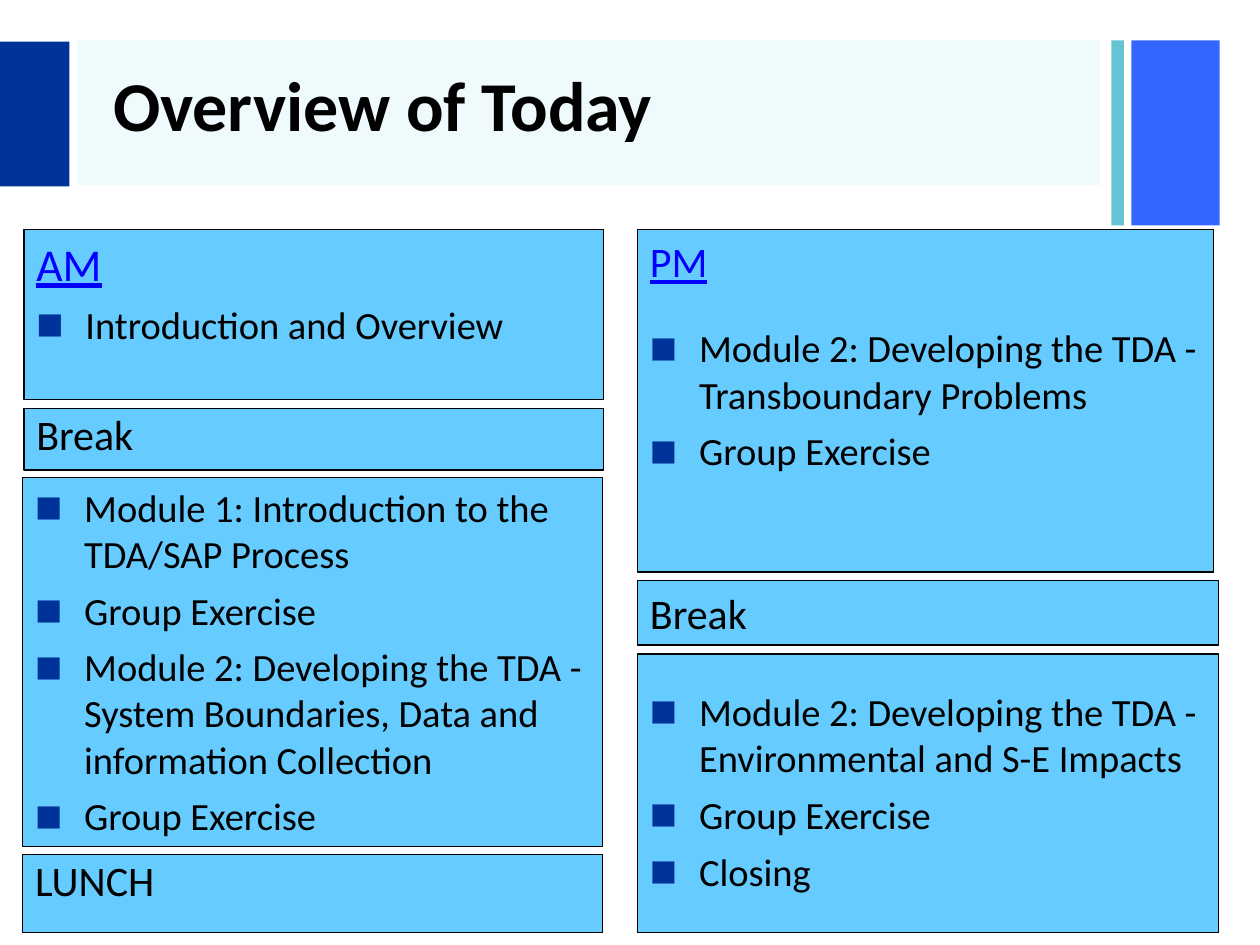
import pptx
import pptx.dml.color
import pptx.enum.shapes
import pptx.enum.text
import pptx.oxml.ns
import pptx.util
from lxml import etree
from pptx.util import Inches, Pt

RGBColor = pptx.dml.color.RGBColor
NAVY = RGBColor(0x00, 0x33, 0x99)
ROYAL = RGBColor(0x33, 0x66, 0xFF)
TEAL = RGBColor(0x65, 0xC4, 0xD2)
AQUA = RGBColor(0x14, 0xC5, 0xD0)
SKY = RGBColor(0x66, 0xCC, 0xFF)
LINK_BLUE = RGBColor(0x00, 0x00, 0xFF)
BLACK = RGBColor(0x00, 0x00, 0x00)
FONT = "Calibri"
HANGING = Inches(0.39)


def add_block(page, left, top, width, height, color):
    block = page.shapes.add_shape(
        pptx.enum.shapes.MSO_SHAPE.RECTANGLE,
        Inches(left), Inches(top), Inches(width), Inches(height))
    block.shadow.inherit = False
    block.fill.solid()
    block.fill.fore_color.rgb = color
    block.line.fill.background()
    return block


def make_bullet(para):
    properties = para._p.get_or_add_pPr()
    properties.set("marL", str(HANGING))
    properties.set("indent", str(-HANGING))
    qn = pptx.oxml.ns.qn
    bullet_color = etree.SubElement(properties, qn("a:buClr"))
    etree.SubElement(bullet_color, qn("a:srgbClr"), val=str(NAVY))
    etree.SubElement(properties, qn("a:buSzPct"), val="75000")
    etree.SubElement(properties, qn("a:buFont"), typeface=FONT)
    etree.SubElement(properties, qn("a:buChar"), char="■")


deck = pptx.Presentation()
deck.slide_width = Inches(10)
deck.slide_height = Inches(7.5)
page = deck.slides.add_slide(deck.slide_layouts[6])

# Header
add_block(page, 8.98, 0.32, 0.7, 1.47, ROYAL)
add_block(page, 8.82, 0.32, 0.1, 1.47, TEAL)
title_band = add_block(page, 0.61, 0.32, 8.12, 1.15, AQUA)
band_color = title_band.fill._xPr.find(".//" + pptx.oxml.ns.qn("a:srgbClr"))
etree.SubElement(band_color, pptx.oxml.ns.qn("a:alpha"), val="7000")
add_block(page, 0, 0.33, 0.55, 1.15, NAVY)

title = page.shapes.add_textbox(Inches(0.8), Inches(0.2), Inches(9), Inches(1.25))
title.text_frame.word_wrap = True
title.text_frame.vertical_anchor = pptx.enum.text.MSO_ANCHOR.MIDDLE
span = title.text_frame.paragraphs[0].add_run()
span.text = "Overview of Today"
span.font.name = FONT
span.font.size = Pt(40)
span.font.bold = True
span.font.color.rgb = BLACK

# Sessions: left, top, width, height, top inset, lines
# Line: kind, text, size, space before
sessions = [
    (0.19, 1.82, 4.6, 1.35, 0.05, [
        ("heading", "AM", 26, 20),
        ("bullet", "Introduction and Overview", 22, 6)]),
    (5.06, 1.82, 4.57, 2.72, 0.05, [
        ("heading", "PM", 24, 6),
        ("bullet", "Module 2: Developing the TDA - Transboundary Problems", 22, 22),
        ("bullet", "Group Exercise", 22, 6)]),
    (0.18, 3.79, 4.6, 2.93, 0.05, [
        ("bullet", "Module 1: Introduction to the TDA/SAP Process", 22, 6),
        ("bullet", "Group Exercise", 22, 6),
        ("bullet", "Module 2: Developing the TDA - System Boundaries, "
                   "Data and information Collection", 22, 6),
        ("bullet", "Group Exercise", 22, 6)]),
    (0.19, 3.24, 4.6, 0.49, 0, [("pause", "Break", 24, 5)]),
    (5.06, 5.19, 4.61, 2.21, 0.27, [
        ("bullet", "Module 2: Developing the TDA - "
                   "Environmental and S-E Impacts", 22, 6),
        ("bullet", "Group Exercise", 22, 6),
        ("bullet", "Closing", 22, 6)]),
    (5.06, 4.61, 4.61, 0.51, 0.05, [("pause", "Break", 24, 5)]),
    (0.18, 6.78, 4.6, 0.62, 0, [("pause", "LUNCH", 24, 5)]),
]

for left, top, width, height, top_inset, lines in sessions:
    box = add_block(page, left, top, width, height, SKY)
    box.line.color.rgb = BLACK
    box.line.width = Pt(0.75)
    frame = box.text_frame
    frame.word_wrap = True
    frame.vertical_anchor = pptx.enum.text.MSO_ANCHOR.TOP
    frame.margin_top = Inches(top_inset)
    frame.margin_bottom = Inches(min(top_inset, 0.05))
    for index, (kind, text, size, space_before) in enumerate(lines):
        para = frame.add_paragraph() if index else frame.paragraphs[0]
        para.alignment = pptx.enum.text.PP_ALIGN.LEFT
        para.space_before = Pt(space_before)
        if kind == "bullet":
            make_bullet(para)
        span = para.add_run()
        span.text = text
        span.font.name = FONT
        span.font.size = Pt(size)
        span.font.underline = kind == "heading"
        span.font.color.rgb = LINK_BLUE if kind == "heading" else BLACK

deck.save("out.pptx")
